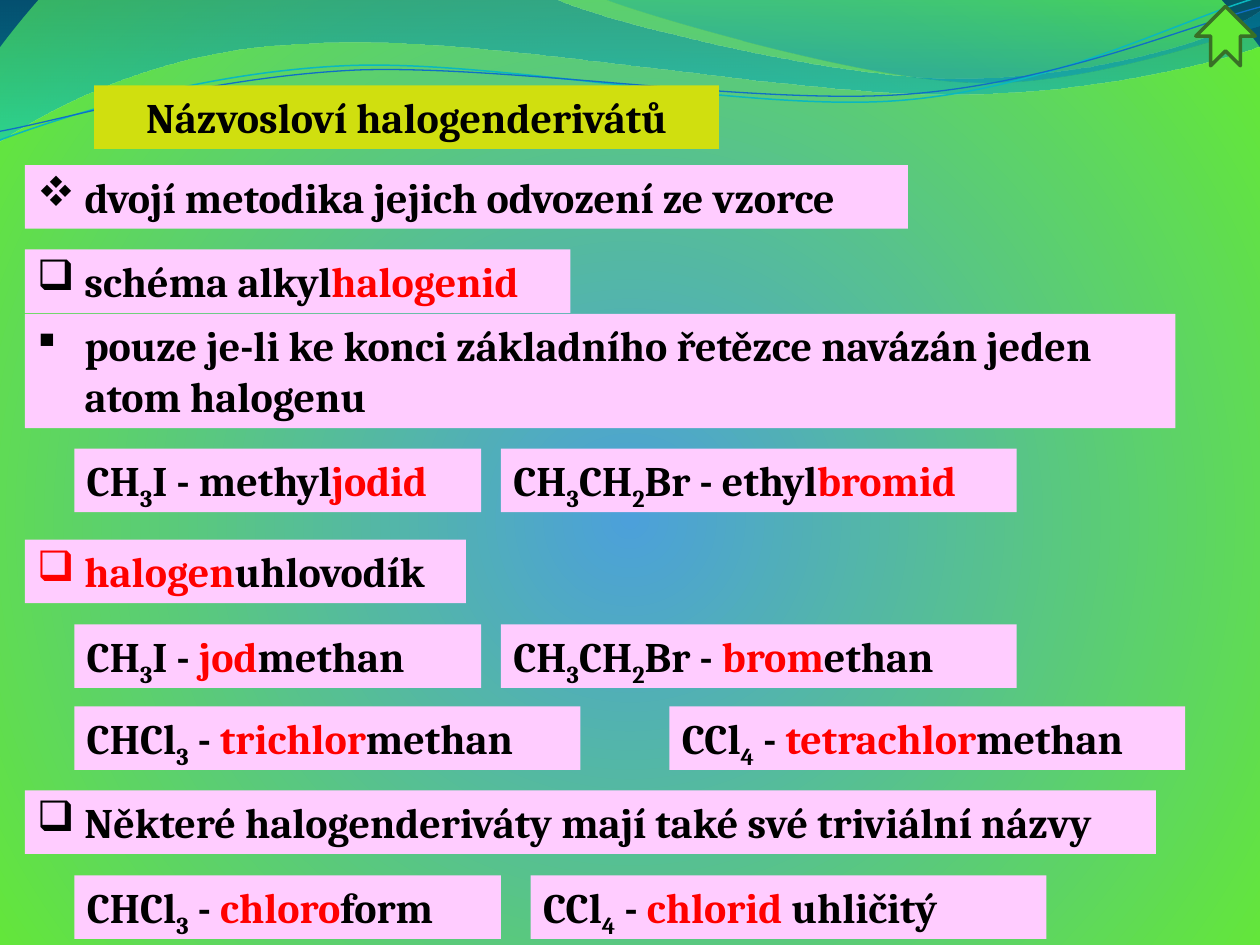
import math
from dataclasses import dataclass

from lxml import etree
from pptx import Presentation
from pptx.dml.color import RGBColor
from pptx.enum.shapes import MSO_SHAPE
from pptx.enum.text import MSO_AUTO_SIZE, PP_ALIGN
from pptx.oxml import parse_xml
from pptx.oxml.ns import qn
from pptx.util import Pt

ARROW = MSO_SHAPE.NOTCHED_RIGHT_ARROW
GROW = MSO_AUTO_SIZE.SHAPE_TO_FIT_TEXT
CENTER = PP_ALIGN.CENTER

BLACK = RGBColor(0x00, 0x00, 0x00)
RED = RGBColor(0xFF, 0x00, 0x00)
PINK = RGBColor(0xFF, 0xCC, 0xFF)
OLIVE = RGBColor(0xD0, 0xDF, 0x0F)
GREEN = RGBColor(0x64, 0xE9, 0x35)
DARK_GREEN = RGBColor(0x38, 0x70, 0x26)
SKY = RGBColor(0x4C, 0xA0, 0xDA)
NAVY = RGBColor(0x08, 0x32, 0x48)
OCEAN = RGBColor(0x00, 0x74, 0xA1)
CYAN = RGBColor(0x00, 0xC6, 0xCF)
TEAL = RGBColor(0x00, 0xA1, 0xA9)
AZURE = RGBColor(0x00, 0x8B, 0xBF)
AQUA = RGBColor(0x0A, 0xB8, 0xBF)
BLUE = RGBColor(0x0F, 0x6F, 0xC6)

FONT = "Cambria"
BULLET_FONT = "Wingdings"
DIAMOND, BOX, SQUARE = "v", "q", "§"
A_NS = "http://schemas.openxmlformats.org/drawingml/2006/main"
P_NS = "http://schemas.openxmlformats.org/presentationml/2006/main"
LINE_H = 36.3
INDENT = 27
LEFT, INNER, SECOND = 14.2, 42.5, 286.3


@dataclass
class Stop:
    pos: int
    color: RGBColor
    alpha: int = 100


@dataclass
class Wave:
    """Two numbers in a step make a line, six make a Bézier curve."""
    box: tuple
    start: tuple
    steps: list
    stops: list | None = None
    line: RGBColor | None = None
    weight: float = 0
    rotation: float = 0


@dataclass
class Label:
    """Runs are parted by |; a leading * makes one red, a leading _ subscript."""
    left: float
    top: float
    width: float
    text: str
    bullet: str = ""
    height: float = LINE_H
    fill: RGBColor = PINK
    centered: bool = False


WAVES = [
    Wave((-0.7, -0.7, 721.4, 82), (0, 0),
         [(317, -0.7), (343, 12, 478, 45, 546, 45), (614, 45, 690, 27, 720, 6.5),
          (721, 26), (708, 32, 626, 55, 537, 54), (446, 54, 275, 20, 185, 24.5),
          (93, 26, 33, 60, -0.7, 81), (0, 0)],
         stops=[Stop(0, OCEAN, 45), Stop(100, CYAN, 55)]),
    Wave((345, -0.7, 375, 50.4), (345, -0.7),
         [(366, 8, 491, 45, 554, 47), (616, 50, 692, 23, 720, 15), (720, 0), (345, -0.7)],
         stops=[Stop(0, TEAL, 30), Stop(80, AZURE, 45)]),
    Wave((-1.4, 15.8, 721.4, 51.1), (0, 80),
         [(35, 67, 114, 41, 199, 37.5), (284, 34, 427, 64, 513, 57.5),
          (600, 51, 675, 11, 719, -1.5)], line=AQUA, weight=0.85, rotation=357.3),
    Wave((-1.4, 21.6, 722.2, 41.8), (0, 75),
         [(34, 69, 118, 44, 204, 40), (290, 37, 430, 60, 516, 54),
          (602, 48, 678, 15, 720, 4)], line=BLUE, weight=0.75, rotation=357.3),
]

LABELS = [
    Label(53.8, 48.8, 357, "Názvosloví halogenderivátů", fill=OLIVE, centered=True),
    Label(LEFT, 142.5, 311.8, "schéma alkyl|*halogenid", BOX),
    Label(LEFT, 179.3, 657.5, "pouze je-li ke konci základního řetězce navázán jeden atom halogenu",
          SQUARE, height=65.4),
    Label(LEFT, 451.7, 646.3, "Některé halogenderiváty mají také své triviální názvy", BOX),
    Label(LEFT, 308.4, 252, "*halogen|uhlovodík", BOX),
    Label(INNER, 256.3, 232.5, "CH|_3|I - methyl|*jodid"),
    Label(SECOND, 256.3, 294.7, "CH|_3|CH|_2|Br - ethyl|*bromid"),
    Label(INNER, 356.8, 232.5, "CH|_3|I - |*jod|methan"),
    Label(SECOND, 356.8, 294.7, "CH|_3|CH|_2|Br - |*brom|ethan"),
    Label(INNER, 500.2, 243.8, "CHCl|_3| - |*chloro|form"),
    Label(303.3, 500.2, 294.7, "CCl|_4| - |*chlorid| uhličitý"),
    Label(INNER, 403.7, 289.2, "CHCl|_3| - |*trichlor|methan"),
    Label(382.6, 403.7, 294.7, "CCl|_4| - |*tetrachlor|methan"),
    Label(LEFT, 94.4, 504.6, "dvojí metodika jejich odvození ze vzorce", DIAMOND),
]


def gradient_xml(stops: list, direction: str) -> str:
    gs = "".join(f'<a:gs pos="{s.pos * 1000}"><a:srgbClr val="{s.color}">'
                 f'<a:alpha val="{s.alpha * 1000}"/></a:srgbClr></a:gs>' for s in stops)
    return f'<a:gradFill xmlns:a="{A_NS}" rotWithShape="1"><a:gsLst>{gs}</a:gsLst>{direction}</a:gradFill>'


def set_background(slide) -> None:
    direction = '<a:path path="circle"><a:fillToRect l="10000" t="110000" r="10000" b="100000"/></a:path>'
    fill = gradient_xml([Stop(0, SKY), Stop(100, GREEN), Stop(100, NAVY)], direction)
    bg = parse_xml(f'<p:bg xmlns:p="{P_NS}" xmlns:a="{A_NS}"><p:bgPr>{fill}<a:effectLst/></p:bgPr></p:bg>')
    slide.element.cSld.insert(0, bg)


def local_point(wave: Wave, x: float, y: float) -> tuple:
    """Turn a slide point into EMU inside the wave's unrotated box."""
    left, top, width, height = wave.box
    dx, dy = x - left - width / 2, y - top - height / 2
    a = math.radians(-wave.rotation)
    return (Pt(dx * math.cos(a) - dy * math.sin(a) + width / 2),
            Pt(dx * math.sin(a) + dy * math.cos(a) + height / 2))


def set_outline(sp, wave: Wave) -> None:
    """Give the freeform its true curves and its box."""
    outline = next(sp.element.iter(qn("a:path")))
    for child in list(outline):
        outline.remove(child)
    sp.left, sp.top, sp.width, sp.height = (Pt(v) for v in wave.box)
    outline.set("w", str(sp.width))
    outline.set("h", str(sp.height))
    for i, step in enumerate([wave.start, *wave.steps]):
        tag = "a:moveTo" if i == 0 else "a:lnTo" if len(step) == 2 else "a:cubicBezTo"
        node = etree.SubElement(outline, qn(tag))
        for x, y in zip(step[::2], step[1::2]):
            px, py = local_point(wave, x, y)
            etree.SubElement(node, qn("a:pt"), x=str(px), y=str(py))
    if wave.stops:
        etree.SubElement(outline, qn("a:close"))


def draw_wave(slide, wave: Wave) -> None:
    fb = slide.shapes.build_freeform(*(Pt(v) for v in wave.start))
    fb.add_line_segments([(Pt(s[-2]), Pt(s[-1])) for s in wave.steps], close=False)
    sp = fb.convert_to_shape()
    set_outline(sp, wave)
    sp.rotation = wave.rotation
    sp.shadow.inherit = False
    if wave.stops:
        sp.line.fill.background()
        fill = parse_xml(gradient_xml(wave.stops, '<a:lin ang="5400000" scaled="1"/>'))
        sp.element.spPr.find(qn("a:custGeom")).addnext(fill)
    else:
        sp.fill.background()
        sp.line.color.rgb = wave.line
        sp.line.width = Pt(wave.weight)


def set_bullet(p, char: str) -> None:
    pPr = p._p.get_or_add_pPr()
    pPr.set("marL", str(Pt(INDENT)))
    pPr.set("indent", str(Pt(-INDENT)))
    etree.SubElement(pPr, qn("a:buFont"), typeface=BULLET_FONT, charset="2")
    etree.SubElement(pPr, qn("a:buChar"), char=char)


def draw_label(slide, label: Label) -> None:
    sp = slide.shapes.add_textbox(Pt(label.left), Pt(label.top), Pt(label.width), Pt(label.height))
    sp.fill.solid()
    sp.fill.fore_color.rgb = label.fill
    tf = sp.text_frame
    tf.word_wrap = True
    tf.auto_size = GROW
    p = tf.paragraphs[0]
    if label.centered:
        p.alignment = CENTER
    if label.bullet:
        set_bullet(p, label.bullet)
    for part in label.text.split("|"):
        r = p.add_run()
        r.text = part.lstrip("*_")
        r.font.name = FONT
        r.font.size = Pt(24)
        r.font.bold = True
        r.font.color.rgb = RED if part.startswith("*") else BLACK
        if part.startswith("_"):
            r.font._element.set("baseline", "-25000")


def draw_up_arrow(slide) -> None:
    sp = slide.shapes.add_shape(ARROW, Pt(683.3), Pt(3.6), Pt(34), Pt(34))
    sp.rotation = 270
    sp.shadow.inherit = False
    sp.fill.solid()
    sp.fill.fore_color.rgb = GREEN
    sp.line.color.rgb = DARK_GREEN
    sp.line.width = Pt(2)


def main() -> None:
    prs = Presentation()
    prs.slide_width, prs.slide_height = Pt(720), Pt(540)
    slide = prs.slides.add_slide(prs.slide_layouts[6])
    set_background(slide)
    for wave in WAVES:
        draw_wave(slide, wave)
    for label in LABELS:
        draw_label(slide, label)
    draw_up_arrow(slide)
    prs.save("out.pptx")


if __name__ == "__main__":
    main()
